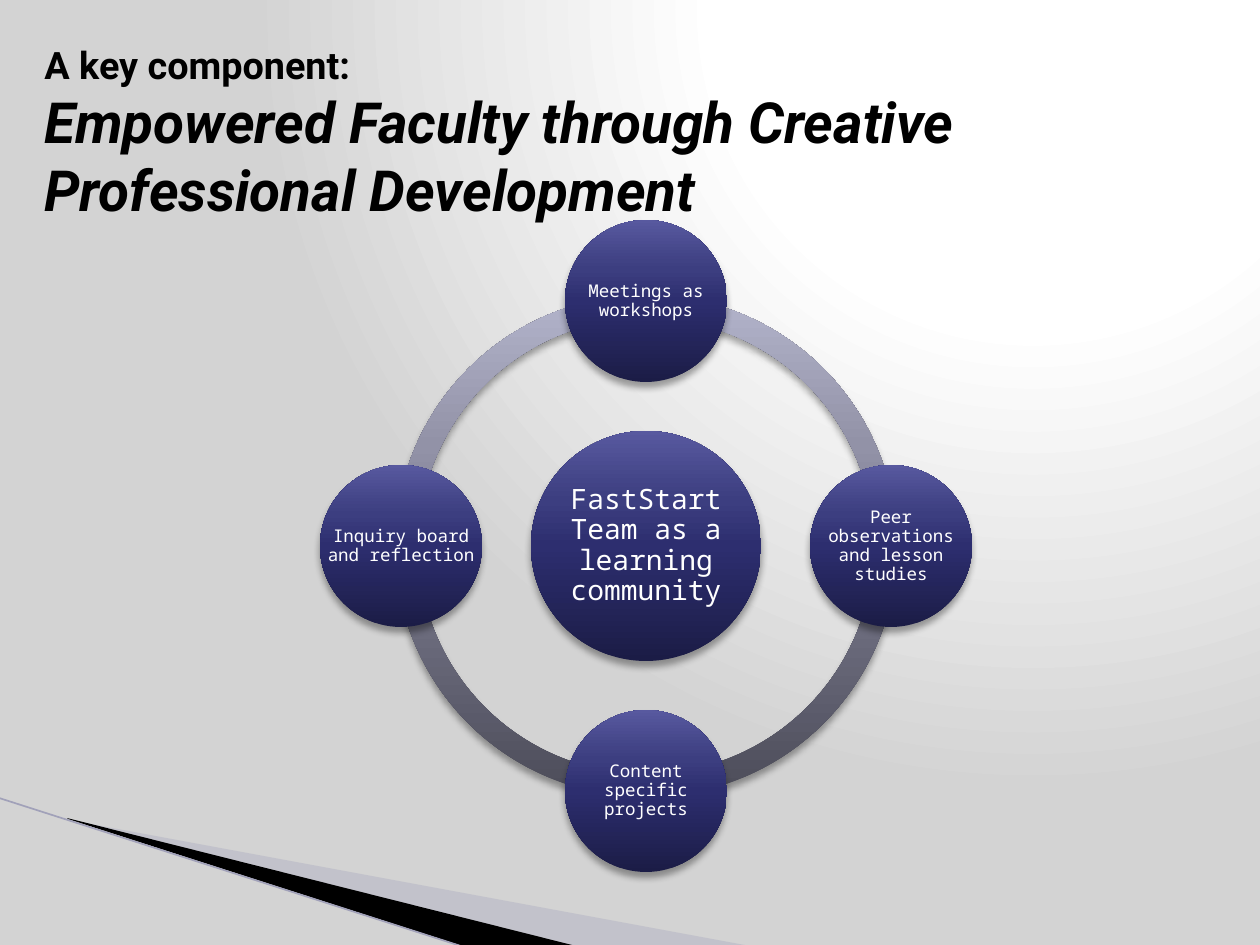
from dataclasses import dataclass

from lxml.etree import SubElement
from pptx import Presentation
from pptx.dml.color import RGBColor
from pptx.enum.shapes import MSO_CONNECTOR as Connector, MSO_SHAPE as Shape
from pptx.enum.text import MSO_ANCHOR as Anchor, PP_ALIGN as Align
from pptx.oxml.ns import qn
from pptx.util import Emu, Pt

SCALE = 914400 / 126


@dataclass(frozen=True)
class Theme:
    """Colours, fonts and type sizes of the slide."""
    backdrop: tuple = ((0, "FFFFFF"), (40, "FFFFFF"), (100, "D3D3D3"))
    ring: tuple = ((0, "4C4C59"), (50, "7B7B8F"), (70, "9292A7"), (100, "B3B4CB"))
    disc: tuple = ((0, "1B1C46"), (50, "2D2E6F"), (70, "3C3E80"), (100, "58599F"))
    pale: str = "AAAABF"
    ink: str = "000000"
    edge: str = "A1A1B9"
    label: str = "FFFFFF"
    title_font: str = "Roboto"
    label_font: str = "Noto Sans Mono"
    lead_size: float = 21.6
    title_size: float = 32.4
    hub_size: float = 16
    topic_size: float = 10


THEME = Theme()
CENTER = (646, 546)
ORBIT = 245
RING = 502
HUB = 230
TOPIC = 162
TOPICS = (
    ("Meetings as workshops", 0, -1),
    ("Peer observations and lesson studies", 1, 0),
    ("Content specific projects", 0, 1),
    ("Inquiry board and reflection", -1, 0),
)
ARCS = ((108, 162), (54, 108), (0, 54), (162, 0))


def px(length):
    """Turn pixels into EMU."""
    return Emu(round(length * SCALE))


def centered(x, y, size):
    """Return the square of a given size around a point."""
    return px(x - size // 2), px(y - size // 2), px(size), px(size)


def apply(target, **formats):
    """Set each format value on the target."""
    for key, value in formats.items():
        setattr(target, key, value)


def paint_gradient(fill, owner, stops):
    """Give a fill its colour stops and return the emptied gradient element."""
    fill.gradient()
    gradient = next(owner.iter(qn("a:gradFill")))
    for child in list(gradient):
        gradient.remove(child)
    stop_list = SubElement(gradient, qn("a:gsLst"))
    for position, color in stops:
        stop = SubElement(stop_list, qn("a:gs"), pos=str(position * 1000))
        SubElement(stop, qn("a:srgbClr"), val=color)
    return gradient


def paint_backdrop(slide):
    """Fill the background with a glow from the upper right."""
    gradient = paint_gradient(slide.background.fill, slide.element, THEME.backdrop)
    glow = SubElement(gradient, qn("a:path"), path="circle")
    SubElement(glow, qn("a:fillToRect"), l="65000", t="0", r="0", b="98000")


def add_glossy(slide, kind, box, stops):
    """Add a shape with a vertical gradient and a soft shadow."""
    glossy = slide.shapes.add_shape(kind, *box)
    glossy.line.fill.background()
    glossy.shadow.inherit = False
    gradient = paint_gradient(glossy.fill, glossy.element, stops)
    SubElement(gradient, qn("a:lin"), ang="16200000", scaled="0")
    effects = next(glossy.element.iter(qn("a:effectLst")))
    shadow = SubElement(effects, qn("a:outerShdw"), blurRad=str(Pt(4)),
                        dist=str(Pt(3)), dir="5400000", rotWithShape="0")
    color = SubElement(shadow, qn("a:srgbClr"), val="000000")
    SubElement(color, qn("a:alpha"), val="35000")
    return glossy


def add_run(paragraph, text, font, size, color, **formats):
    """Add a formatted run to a paragraph."""
    run = paragraph.add_run()
    run.text = text
    apply(run.font, name=font, size=Pt(size), **formats)
    run.font.color.rgb = RGBColor.from_string(color)


def add_disc(slide, text, x, y, diameter, size, inset):
    """Add a round disc with a centred label."""
    box = centered(x, y, diameter)
    add_glossy(slide, Shape.OVAL, box, THEME.disc)
    frame = slide.shapes.add_textbox(*box).text_frame
    sides = ("margin_left", "margin_top", "margin_right", "margin_bottom")
    apply(frame, word_wrap=True, vertical_anchor=Anchor.MIDDLE,
          **dict.fromkeys(sides, px(inset)))
    paragraph = frame.paragraphs[0]
    apply(paragraph, alignment=Align.CENTER, line_spacing=0.9)
    add_run(paragraph, text, THEME.label_font, size, THEME.label)


def add_wedge(slide, points, color, opacity=100):
    """Add a flat polygon through the points."""
    builder = slide.shapes.build_freeform(*points[0], scale=SCALE)
    builder.add_line_segments(points[1:], close=True)
    wedge = builder.convert_to_shape()
    wedge.shadow.inherit = False
    wedge.line.fill.background()
    wedge.fill.solid()
    wedge.fill.fore_color.rgb = RGBColor.from_string(color)
    if opacity < 100:
        tint = next(wedge.element.iter(qn("a:srgbClr")))
        SubElement(tint, qn("a:alpha"), val=str(opacity * 1000))


def add_edge(slide, start, end):
    """Add the thin line along the corner wedge."""
    edge = slide.shapes.add_connector(
        Connector.STRAIGHT, *map(px, start), *map(px, end))
    edge.line.width = Pt(0.95)
    edge.line.color.rgb = RGBColor.from_string(THEME.edge)
    SubElement(edge.element.spPr, qn("a:effectLst"))


def add_title(slide):
    """Add the two-part heading."""
    frame = slide.shapes.add_textbox(px(32), px(53), px(1134), px(158)).text_frame
    apply(frame, word_wrap=True, vertical_anchor=Anchor.MIDDLE)
    heading = frame.paragraphs[0]
    add_run(heading, "A key component:", THEME.title_font, THEME.lead_size,
            THEME.ink, bold=True)
    heading.add_line_break()
    add_run(heading, "Empowered Faculty through Creative Professional Development",
            THEME.title_font, THEME.title_size, THEME.ink, bold=True, italic=True)


def add_cycle(slide):
    """Add the ring, its hub and the four topics around it."""
    for start, end in ARCS:
        arc = add_glossy(slide, Shape.BLOCK_ARC, centered(*CENTER, RING), THEME.ring)
        for index, value in enumerate((start, end, 0.046)):
            arc.adjustments[index] = value
    add_disc(slide, "FastStart Team as a learning community", *CENTER, HUB,
             THEME.hub_size, 2)
    for text, across, down in TOPICS:
        add_disc(slide, text, CENTER[0] + across * ORBIT, CENTER[1] + down * ORBIT,
                 TOPIC, THEME.topic_size, 1)


def main():
    """Build and save the slide."""
    deck = Presentation()
    apply(deck, slide_width=px(1260), slide_height=px(945))
    slide = deck.slides.add_slide(deck.slide_layouts[6])
    paint_backdrop(slide)
    add_wedge(slide, ((69, 820), (750, 946), (575, 946), (69, 819)), THEME.pale, 40)
    add_wedge(slide, ((67, 818), (576, 946), (469, 948), (68, 819)), THEME.ink)
    add_edge(slide, (-1, 798), (467, 948))
    add_cycle(slide)
    add_title(slide)
    deck.save("out.pptx")


if __name__ == "__main__":
    main()
